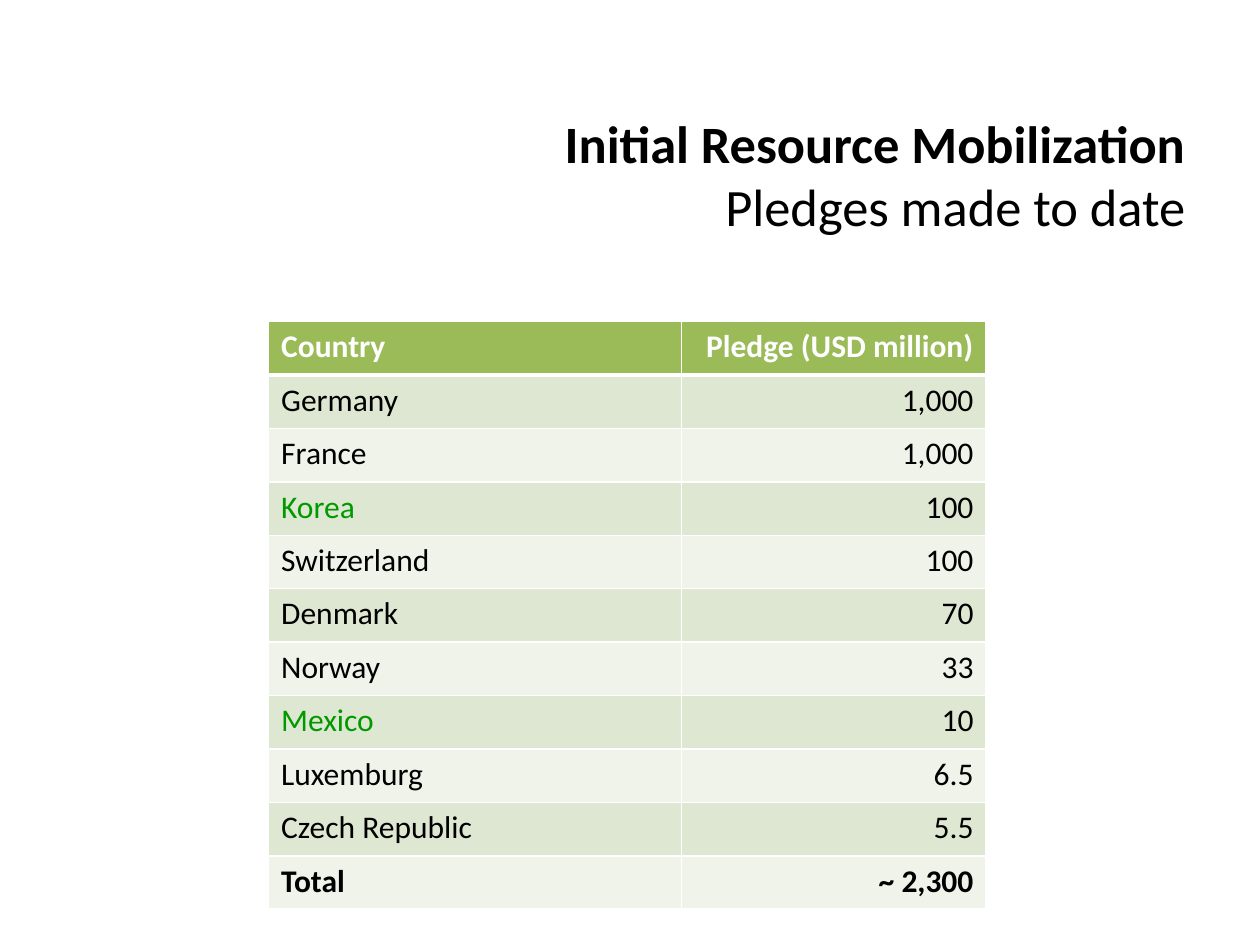
from lxml import etree
from pptx import Presentation
from pptx.dml.color import RGBColor
from pptx.enum.text import MSO_ANCHOR, PP_ALIGN
from pptx.oxml.ns import qn
from pptx.util import Pt

LEFT, RIGHT = PP_ALIGN.LEFT, PP_ALIGN.RIGHT
TOP = MSO_ANCHOR.TOP
HUES = {"black": "000000", "white": "FFFFFF", "green": "009900",
        "head": "9BBB59", "dark": "DEE7D1", "light": "EFF3EA"}
ROWS = [
    ("Country", "Pledge (USD million)"),
    ("Germany", "1,000"),
    ("France", "1,000"),
    ("Korea", "100"),
    ("Switzerland", "100"),
    ("Denmark", "70"),
    ("Norway", "33"),
    ("Mexico", "10"),
    ("Luxemburg", "6.5"),
    ("Czech Republic", "5.5"),
    ("Total", "~ 2,300"),
]
GREENS = {"Korea", "Mexico"}


class Deck:
    """Holds the style and the current slide, and adds elements to it."""

    def __init__(self, wide, high):
        self.face = "Calibri"
        self.show = Presentation()
        self.show.slide_width, self.show.slide_height = Pt(wide), Pt(high)
        self.slide = self.show.slides.add_slide(self.show.slide_layouts[6])

    def style(self, font, size, hue="black", bold=False):
        form = {"name": self.face, "size": Pt(size), "bold": bold}
        for key, value in form.items():
            setattr(font, key, value)
        font.color.rgb = RGBColor.from_string(HUES[hue])

    def title(self, x, y, wide, high, lines, size):
        frame = self.slide.shapes.add_textbox(Pt(x), Pt(y), Pt(wide), Pt(high)).text_frame
        form = {"word_wrap": True, "vertical_anchor": TOP,
                "margin_left": 0, "margin_right": 0}
        for key, value in form.items():
            setattr(frame, key, value)
        para = frame.paragraphs[0]
        para.alignment = RIGHT
        self.style(para.font, size)
        for spot, (text, bold) in enumerate(lines):
            if spot:
                para.add_line_break()
            run = para.add_run()
            run.text = text
            self.style(run.font, size, bold=bold)

    def edge(self, cell, side, width):
        line = etree.SubElement(cell._tc.get_or_add_tcPr(), qn(f"a:ln{side}"),
                                w=str(Pt(width)))
        fill = etree.SubElement(line, qn("a:solidFill"))
        etree.SubElement(fill, qn("a:srgbClr"), val=HUES["white"])

    def cell(self, cell, text, align, fill, edges, **form):
        for side, width in edges.items():
            self.edge(cell, side, width)
        cell.fill.solid()
        cell.fill.fore_color.rgb = RGBColor.from_string(HUES[fill])
        cell.text = text
        cell.vertical_anchor = TOP
        para = cell.text_frame.paragraphs[0]
        para.alignment = align
        self.style(para.runs[0].font, **form)

    def table(self, x, y, wides, high, rows, size):
        grid = self.slide.shapes.add_table(len(rows), len(wides), Pt(x), Pt(y),
                                           Pt(sum(wides)), Pt(high)).table
        for col, wide in zip(grid.columns, wides):
            col.width = Pt(wide)
        for r, row in enumerate(rows):
            grid.rows[r].height = Pt(high / len(rows))
            head, last = r == 0, r == len(rows) - 1
            fill = "head" if head else "dark" if r % 2 else "light"
            edges = {"L": 1, "R": 1, "T": 3 if r == 1 else 1, "B": 3 if head else 1}
            for c, text in enumerate(row):
                hue = "white" if head else "green" if text in GREENS else "black"
                self.cell(grid.cell(r, c), text, RIGHT if c else LEFT, fill, edges,
                          size=size, hue=hue, bold=head or last)


def main():
    deck = Deck(720, 540)
    deck.title(261.5, 60, 416, 33, [("Initial Resource Mobilization", True),
                                    ("Pledges made to date", False)], 30)
    deck.table(153.5, 183.75, (236, 174), 336, ROWS, 18)
    deck.show.save("out.pptx")


if __name__ == "__main__":
    main()
